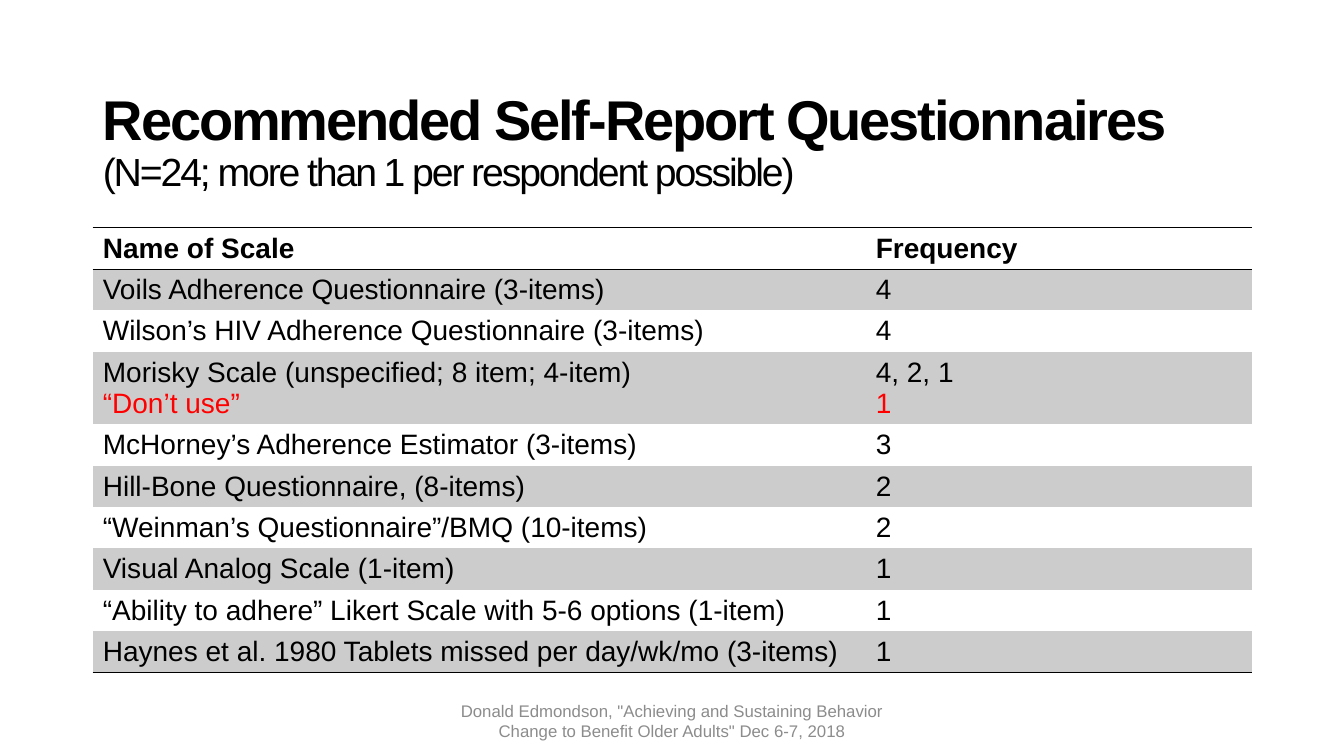
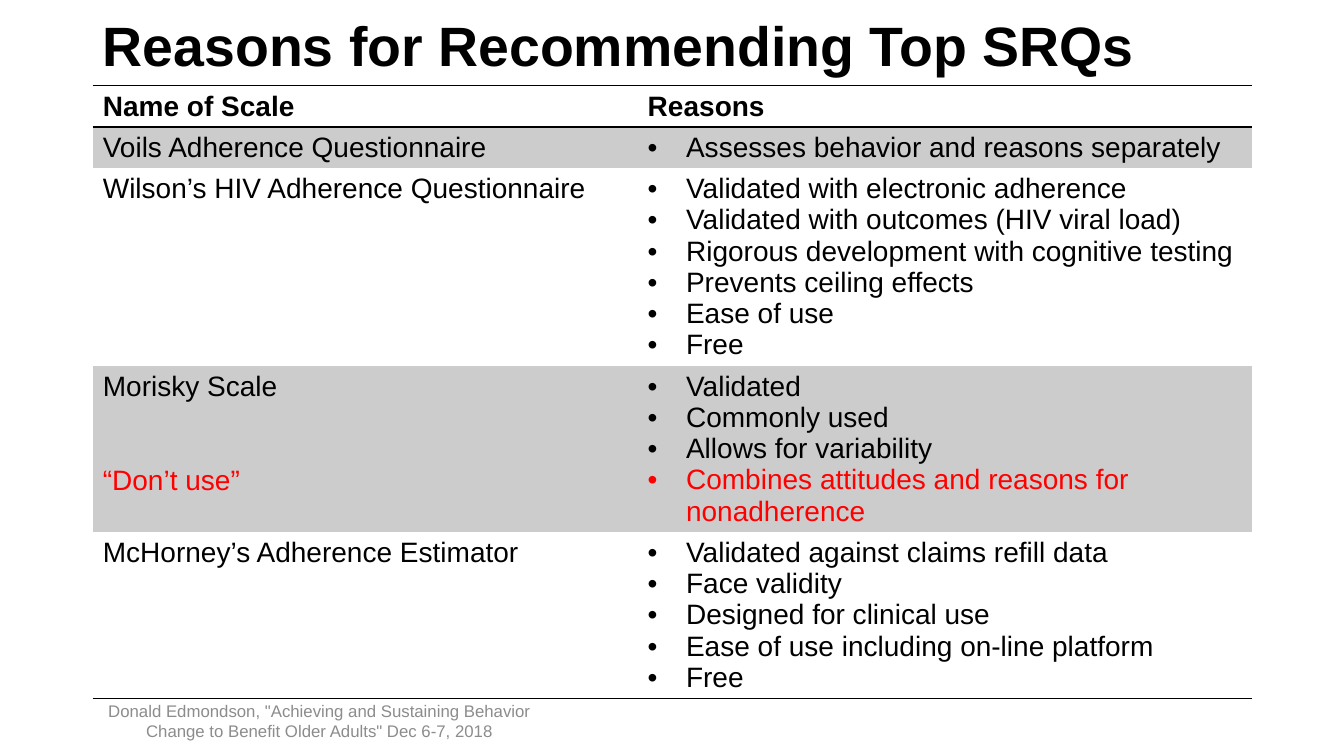
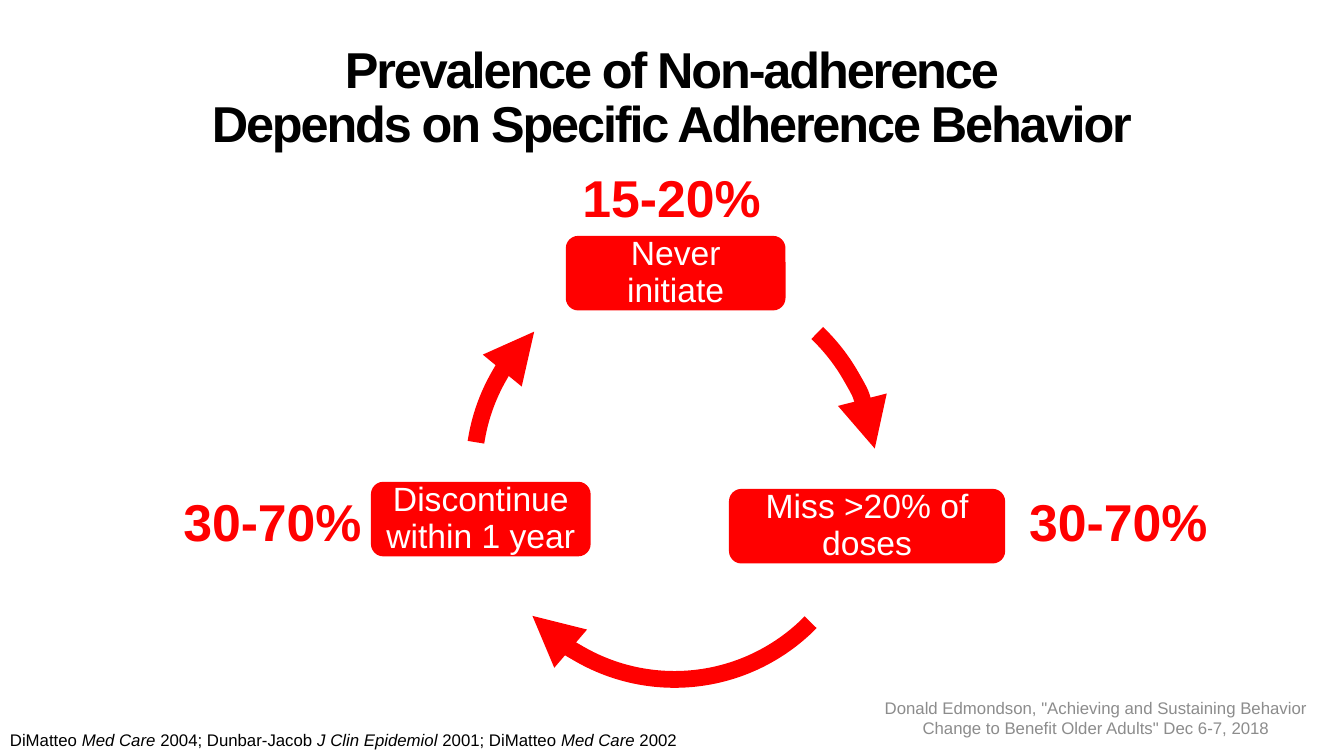
from dataclasses import dataclass

from lxml import etree
from pptx import Presentation
from pptx.dml.color import RGBColor
from pptx.enum.shapes import MSO_SHAPE
from pptx.enum.text import MSO_ANCHOR, MSO_AUTO_SIZE, PP_ALIGN
from pptx.oxml.ns import qn
from pptx.util import Inches, Pt

LEFT, CENTER = PP_ALIGN.LEFT, PP_ALIGN.CENTER
TOP, MIDDLE = MSO_ANCHOR.TOP, MSO_ANCHOR.MIDDLE
ARC, ROUND = MSO_SHAPE.ARC, MSO_SHAPE.ROUNDED_RECTANGLE
FIT_NONE = MSO_AUTO_SIZE.NONE
PLAIN_TABLE = "{2D5ABB26-0587-4C30-8999-92F81FD0307C}"


@dataclass(frozen=True)
class Theme:
    font: str = "Arial"
    ink: str = "000000"
    red: str = "FF0000"
    white: str = "FFFFFF"
    band: str = "CCCCCC"
    gray: str = "8C8C8C"
    head: float = 40
    sub: float = 28
    cell: float = 20
    box: float = 24
    stat: float = 37
    small: float = 12


@dataclass(frozen=True)
class Red:
    """A warning line, with an optional gap above it in points."""
    text: str
    gap: float = 0


THEME = Theme()
WIDTH, HEIGHT = Inches(13.33), Inches(7.5)
MARGIN, WIDE = 6.9, 86.27  # all places are percent of the slide
ROW = 5.47
FOOTER = ('Donald Edmondson, "Achieving and Sustaining Behavior '
          'Change to Benefit Older Adults" Dec 6-7, 2018')

SCALES = [
    ("Name of Scale", "Frequency"),
    ("Voils Adherence Questionnaire (3-items)", "4"),
    ("Wilson’s HIV Adherence Questionnaire (3-items)", "4"),
    (["Morisky Scale (unspecified; 8 item; 4-item)", Red("“Don’t use”")],
     ["4, 2, 1", Red("1")]),
    ("McHorney’s Adherence Estimator (3-items)", "3"),
    ("Hill-Bone Questionnaire, (8-items)", "2"),
    ("“Weinman’s Questionnaire”/BMQ (10-items)", "2"),
    ("Visual Analog Scale (1-item)", "1"),
    ("“Ability to adhere” Likert Scale with 5-6 options (1-item)", "1"),
    ("Haynes et al. 1980 Tablets missed per day/wk/mo (3-items)", "1"),
]

REASONS = [
    ("Name of Scale", "Reasons"),
    ("Voils Adherence Questionnaire",
     ["Assesses behavior and reasons separately"]),
    ("Wilson’s HIV Adherence Questionnaire",
     ["Validated with electronic adherence",
      "Validated with outcomes (HIV viral load)",
      "Rigorous development with cognitive testing",
      "Prevents ceiling effects", "Ease of use", "Free"]),
    (["Morisky Scale", Red("“Don’t use”", 45)],
     ["Validated", "Commonly used", "Allows for variability",
      Red("Combines attitudes and reasons for nonadherence")]),
    ("McHorney’s Adherence Estimator",
     ["Validated against claims refill data", "Face validity",
      "Designed for clinical use", "Ease of use including on-line platform",
      "Free"]),
]

# Cycle: label, left, top, width
STEPS = [
    ("Never initiate", 42.1, 31.2, 16.35),
    ("Miss >20% of doses", 54.24, 64.67, 20.55),
    ("Discontinue within 1 year", 27.6, 63.73, 16.35),
]
# Arcs: centre x, centre y, start and end degrees, clockwise from the right
ARCS = [
    (51.01, 62.27, 313.7, 353.3),
    (50.19, 64.67, 44.4, 138.2),
    (49.44, 62.27, 188.6, 226.9),
]
STATS = [("15-20%", 42.6, 22.8), ("30-70%", 75.84, 65.73),
         ("30-70%", 12.9, 65.73)]
SOURCES = [("DiMatteo ", False), ("Med Care", True),
           (" 2004; Dunbar-Jacob ", False), ("J Clin Epidemiol ", True),
           ("2001; DiMatteo ", False), ("Med Care ", True), ("2002", False)]


# Basics
def across(share):
    return round(WIDTH * share / 100)


def down(share):
    return round(HEIGHT * share / 100)


def frame(x, y, w, h):
    return across(x), down(y), across(w), down(h)


def color(code):
    return RGBColor.from_string(code)


def style(font, size, code, bold=False):
    font.name, font.size, font.bold = THEME.font, Pt(size), bold
    font.color.rgb = color(code)


def add_text(slide, place, text, size, code, bold=False, anchor=TOP,
             align=LEFT):
    box = slide.shapes.add_textbox(*frame(*place))
    box.text_frame.word_wrap = True
    box.text_frame.vertical_anchor = anchor
    para = box.text_frame.paragraphs[0]
    para.text, para.alignment = text, align
    style(para.font, size, code, bold)
    return para


# Shared slide parts
def add_slide(deck, place, lines, align=LEFT, space=0):
    """Lines are (text, size, bold); space is in hundredths of a point."""
    slide = deck.slides.add_slide(deck.slide_layouts[5])
    title = slide.shapes.title
    title.left, title.top, title.width, title.height = frame(*place)
    text = title.text_frame
    text.auto_size, text.vertical_anchor = FIT_NONE, MIDDLE
    para = text.paragraphs[0]
    para.alignment, para.line_spacing = align, 0.9
    for index, (words, size, bold) in enumerate(lines):
        if index:
            para.add_line_break()
        run = para.add_run()
        run.text = words
        style(run.font, size, THEME.ink, bold)
        run._r.get_or_add_rPr().set("spc", str(space))
    return slide


def add_footer(slide, x, y=92.67):
    add_text(slide, (x, y, 33.75, 5.33), FOOTER, THEME.small, THEME.gray,
             anchor=MIDDLE, align=CENTER)


# Tables
def add_bullet(para):
    props = para._p.get_or_add_pPr()
    indent = Inches(0.38)
    props.set("marL", str(indent))
    props.set("indent", str(-indent))
    etree.SubElement(props, qn("a:buFont"), typeface=THEME.font)
    etree.SubElement(props, qn("a:buChar"), char="•")


def add_rule(cell, side):
    line = etree.SubElement(cell._tc.get_or_add_tcPr(), qn("a:" + side),
                            w=str(Pt(1)))
    fill = etree.SubElement(line, qn("a:solidFill"))
    etree.SubElement(fill, qn("a:srgbClr"), val=THEME.ink)


def fill_cell(cell, lines, bold, bullets):
    text = cell.text_frame
    for index, line in enumerate(lines):
        para = text.add_paragraph() if index else text.paragraphs[0]
        if bullets:
            add_bullet(para)
        warn = isinstance(line, Red)
        para.text = line.text if warn else line
        if warn and line.gap:
            para.space_before = Pt(line.gap)
        style(para.font, THEME.cell, THEME.red if warn else THEME.ink, bold)


def add_grid(slide, top, rows, first, bullets=False):
    """First is the first column's share of the table's width."""
    shape = slide.shapes.add_table(
        len(rows), 2, *frame(MARGIN, top, WIDE, ROW * len(rows)))
    table = shape.table
    table._tbl.tblPr.find(qn("a:tableStyleId")).text = PLAIN_TABLE
    for col, share in enumerate((first, 1 - first)):
        table.columns[col].width = across(WIDE * share)
    for r, row in enumerate(rows):
        for c, content in enumerate(row):
            cell = table.cell(r, c)
            lines = [content] if isinstance(content, str) else content
            fill_cell(cell, lines, r == 0, bullets and r > 0 and c == 1)
            if r == 0:
                add_rule(cell, "lnT")
            if r in (0, len(rows) - 1):
                add_rule(cell, "lnB")
            if r % 2:
                cell.fill.solid()
                cell.fill.fore_color.rgb = color(THEME.band)
            else:
                cell.fill.background()


# Cycle
def add_step(slide, label, x, y, w):
    box = slide.shapes.add_shape(ROUND, *frame(x, y, w, 9.87))
    box.shadow.inherit = False
    box.fill.solid()
    box.fill.fore_color.rgb = color(THEME.red)
    box.line.fill.background()
    text = box.text_frame
    text.word_wrap, text.vertical_anchor = True, MIDDLE
    text.margin_left = text.margin_right = Inches(0.1)
    text.margin_top = text.margin_bottom = Inches(0.1)
    para = text.paragraphs[0]
    para.text, para.alignment, para.line_spacing = label, CENTER, 0.9
    style(para.font, THEME.box, THEME.white)


def add_arc(slide, x, y, start, end):
    w, h = 28.36, 50.4
    arc = slide.shapes.add_shape(ARC, *frame(x - w / 2, y - h / 2, w, h))
    arc.shadow.inherit = False
    arc.fill.background()
    for index, angle in enumerate((start, end)):
        arc.adjustments[index] = angle * 0.6  # 60000 units to a degree
    arc.line.color.rgb = color(THEME.red)
    arc.line.width = Pt(12)
    line = arc._element.spPr.find(qn("a:ln"))
    etree.SubElement(line, qn("a:tailEnd"), type="triangle")


def add_stat(slide, text, x, y):
    para = add_text(slide, (x, y, 17.33, 8.4), text, THEME.stat, THEME.red,
                    bold=True)
    para.line_spacing, para.space_before = 0.8, Pt(10)


def add_sources(slide):
    para = add_text(slide, (0, 95.87, 51.6, 4), "", THEME.small, THEME.ink)
    for words, slant in SOURCES:
        run = para.add_run()
        run.text, run.font.italic = words, slant


def main():
    deck = Presentation()
    deck.slide_width, deck.slide_height = WIDTH, HEIGHT

    # Recommended questionnaires
    slide = add_slide(
        deck, (MARGIN, 9.33, 100 - MARGIN, 19.33),
        [("Recommended Self-Report Questionnaires", THEME.head, True),
         ("(N=24; more than 1 per respondent possible)", THEME.sub, False)],
        space=-150)
    add_grid(slide, 30.13, SCALES, 2 / 3)
    add_footer(slide, 33.13)

    # Reasons
    slide = add_slide(
        deck, (MARGIN, 1.47, WIDE, 10),
        [("Reasons for Recommending Top SRQs", 39.6, True)])
    add_grid(slide, 11.33, REASONS, 0.47, bullets=True)
    add_footer(slide, MARGIN)

    # Prevalence cycle
    slide = add_slide(
        deck, (0, 3.47, 100, 19.33),
        [("Prevalence of Non-adherence", 36, True),
         ("Depends on Specific Adherence Behavior", 36, True)],
        align=CENTER, space=-150)
    for step in STEPS:
        add_step(slide, *step)
    for arc in ARCS:
        add_arc(slide, *arc)
    for stat in STATS:
        add_stat(slide, *stat)
    add_sources(slide)
    add_footer(slide, 64.67, 92.27)

    deck.save("out.pptx")


if __name__ == "__main__":
    main()
